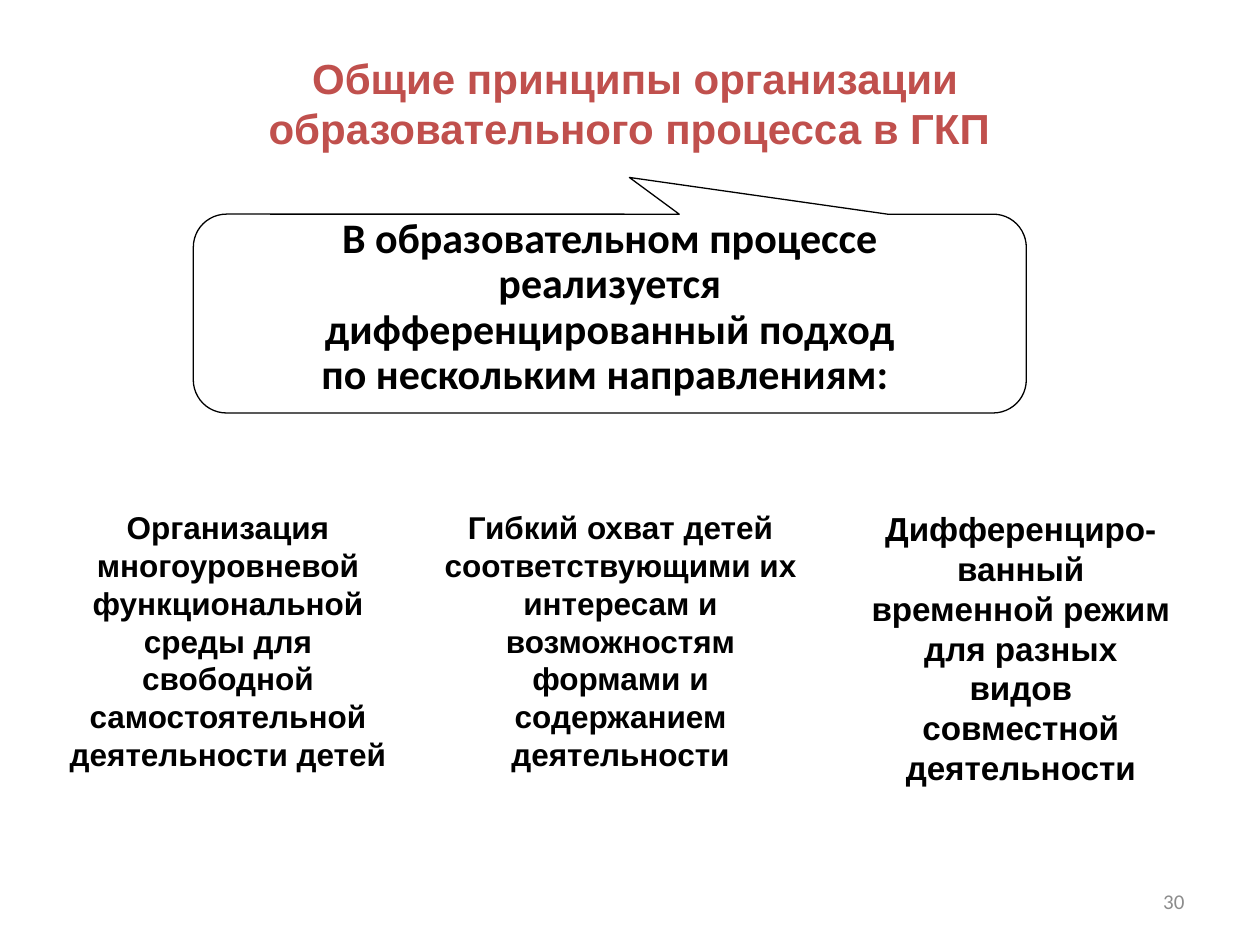
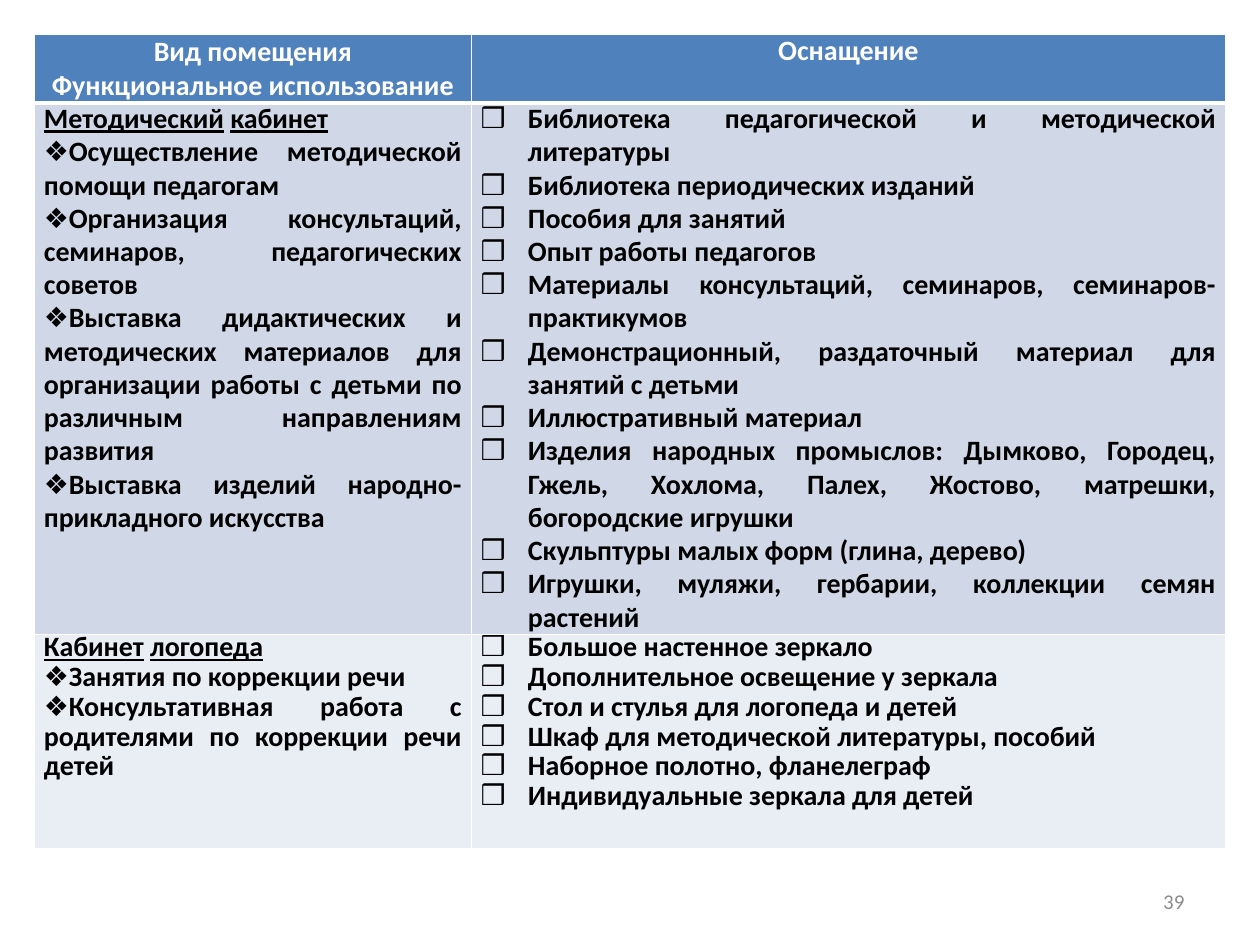
from lxml.etree import SubElement
from pptx import Presentation
from pptx.dml.color import RGBColor
from pptx.enum.shapes import MSO_SHAPE
from pptx.enum.text import MSO_ANCHOR, PP_ALIGN
from pptx.oxml.ns import qn
from pptx.util import Pt

BLACK = RGBColor(0, 0, 0)
WHITE = RGBColor(255, 255, 255)
RED = RGBColor(0xC0, 0x50, 0x4D)
GRAY = RGBColor(0x8C, 0x8C, 0x8C)
HEADER = RGBColor(0x4F, 0x81, 0xBD)
ROW_FILLS = [RGBColor(0xD0, 0xD8, 0xE8), RGBColor(0xE9, 0xED, 0xF4)]

TITLE = "Общие принципы организации образовательного процесса в ГКП "
CALLOUT = [
    "В образовательном процессе",
    "реализуется",
    "дифференцированный подход",
    "по нескольким направлениям: ",
]
CALLOUT_BOX = (110.5, 122.4, 476, 113.6)
CALLOUT_TIP = (359.7, 101.4)
DIRECTIONS = [  # left, width, font size, text
    (25.5, 209.5, 18, "Организация многоуровневой функциональной среды для "
                      "свободной самостоятельной деятельности детей"),
    (246.6, 216, 18, "Гибкий охват детей соответствующими их интересам и "
                     "возможностям формами и содержанием деятельности"),
    (490.4, 185.8, 19, "Дифференциро-ванный временной режим для разных видов "
                       "совместной деятельности"),
]
HEADINGS = [["Вид помещения", "Функциональное использование"], ["Оснащение"]]
ROOMS = [
    {
        "name": "Методический кабинет",
        "uses": [
            "Осуществление методической помощи педагогам",
            "Организация консультаций, семинаров, педагогических советов",
            "Выставка дидактических и методических материалов для организации "
            "работы с детьми по различным направлениям развития",
            "Выставка изделий народно-прикладного искусства",
        ],
        "equipment": [
            "Библиотека педагогической и методической литературы",
            "Библиотека периодических изданий",
            "Пособия для занятий",
            "Опыт работы педагогов",
            "Материалы консультаций, семинаров, семинаров-практикумов",
            "Демонстрационный, раздаточный материал для занятий с детьми",
            "Иллюстративный материал",
            "Изделия народных промыслов: Дымково, Городец, Гжель, Хохлома, "
            "Палех, Жостово, матрешки, богородские игрушки",
            "Скульптуры малых форм (глина, дерево)",
            "Игрушки, муляжи, гербарии, коллекции семян растений",
        ],
        "spacing": Pt(19),
    },
    {
        "name": "Кабинет логопеда",
        "uses": [
            "Занятия по коррекции речи",
            "Консультативная работа с родителями по коррекции речи детей",
        ],
        "equipment": [
            "Большое настенное зеркало",
            "Дополнительное освещение у зеркала",
            "Стол и стулья для логопеда и детей",
            "Шкаф для методической литературы, пособий",
            "Наборное полотно, фланелеграф",
            "Индивидуальные зеркала для детей",
        ],
        "spacing": Pt(17),
    },
]
COLUMN_WIDTHS = [249.6, 431]
ROW_HEIGHTS = [39.1, 303.8, 122.4]


def write(tf, lines, size=16, font="Calibri", color=BLACK, bold=True,
          align=PP_ALIGN.CENTER, spacing=None, bullet=None, hanging=0,
          underline_first=False):
    """Fill a text frame; underline_first makes the first line a heading without a bullet."""
    for i, line in enumerate(lines):
        p = tf.paragraphs[0] if i == 0 else tf.add_paragraph()
        heading = underline_first and i == 0
        if bullet and not heading:
            add_bullet(p, bullet, hanging)
        p.alignment = align
        if spacing:
            p.line_spacing = spacing
        parts = line.partition(" ") if heading else [line]
        for part in parts:
            r = p.add_run()
            r.text = part
            r.font.size = Pt(size)
            r.font.name = font
            r.font.bold = bold
            r.font.color.rgb = color
            if heading and part != " ":
                r.font.underline = True


def add_bullet(p, char, hanging):
    pPr = p._p.get_or_add_pPr()
    pPr.set("marL", str(Pt(hanging)))
    pPr.set("indent", str(-Pt(hanging)))
    SubElement(pPr, qn("a:buFont"), typeface="Calibri")
    SubElement(pPr, qn("a:buChar"), char=char)
    if hanging:
        tabs = SubElement(pPr, qn("a:tabLst"))
        SubElement(tabs, qn("a:tab"), pos=str(Pt(18)), algn="l")


def fill_white(sp):
    sp.shadow.inherit = False
    sp.fill.solid()
    sp.fill.fore_color.rgb = WHITE


def add_text(s, left, top, width, height, lines, anchor=MSO_ANCHOR.TOP,
             panel=False, **fmt):
    """Add a text box, or a white rectangle with text when panel is set."""
    box = Pt(left), Pt(top), Pt(width), Pt(height)
    if panel:
        sp = s.shapes.add_shape(MSO_SHAPE.RECTANGLE, *box)
        fill_white(sp)
        sp.line.fill.background()
    else:
        sp = s.shapes.add_textbox(*box)
    tf = sp.text_frame
    tf.word_wrap = True
    tf.margin_left = tf.margin_right = Pt(7)
    tf.vertical_anchor = anchor
    write(tf, lines, **fmt)


def add_slide(prs, number):
    s = prs.slides.add_slide(prs.slide_layouts[6])
    add_text(s, 515.8, 500.4, 168, 28.8, [str(number)], anchor=MSO_ANCHOR.MIDDLE,
             size=12, color=GRAY, bold=False, align=PP_ALIGN.RIGHT)
    return s


def style_cell(cell, fill, top, bottom):
    """Set fill, margins and white borders; top and bottom are border widths in points."""
    tcPr = cell._tc.get_or_add_tcPr()
    for side, width in (("L", 1), ("R", 1), ("T", top), ("B", bottom)):
        ln = SubElement(tcPr, qn(f"a:ln{side}"), w=str(Pt(width)))
        SubElement(SubElement(ln, qn("a:solidFill")), qn("a:srgbClr"), val=str(WHITE))
    cell.fill.solid()
    cell.fill.fore_color.rgb = fill
    cell.margin_left = cell.margin_right = Pt(5.4)
    cell.margin_top = cell.margin_bottom = 0


def add_callout(s):
    left, top, width, height = CALLOUT_BOX
    tip_x, tip_y = CALLOUT_TIP
    sp = s.shapes.add_shape(MSO_SHAPE.ROUNDED_RECTANGULAR_CALLOUT,
                            Pt(left), Pt(top), Pt(width), Pt(height))
    sp.adjustments[0] = (tip_x - left) / width - 0.5
    sp.adjustments[1] = (tip_y - top) / height - 0.5
    sp.adjustments[2] = 1 / 6
    fill_white(sp)
    sp.line.color.rgb = BLACK
    sp.line.width = Pt(0.75)
    tf = sp.text_frame
    tf.word_wrap = False
    tf.vertical_anchor = MSO_ANCHOR.MIDDLE
    tf.margin_bottom = Pt(10)
    write(tf, CALLOUT, size=24, spacing=0.9)


def build_principles(prs):
    s = add_slide(prs, 30)
    add_callout(s)
    for left, width, size, text in DIRECTIONS:
        add_text(s, left, 286.9, width, 8.4 * size + 7.2, [text], panel=True,
                 size=size, font="Arial", spacing=Pt(1.2 * size))
    add_text(s, 66, 26.2, 594, 65.5, [TITLE], size=24, font="Arial",
             color=RED, spacing=Pt(28.8))


def build_rooms(prs):
    s = add_slide(prs, 39)
    table = s.shapes.add_table(len(ROW_HEIGHTS), len(COLUMN_WIDTHS), Pt(19.7), Pt(19.7),
                               Pt(sum(COLUMN_WIDTHS)), Pt(sum(ROW_HEIGHTS))).table
    for column, width in zip(table.columns, COLUMN_WIDTHS):
        column.width = Pt(width)
    for row, height in zip(table.rows, ROW_HEIGHTS):
        row.height = Pt(height)

    for col, (lines, spacing) in enumerate(zip(HEADINGS, (None, Pt(19)))):
        cell = table.cell(0, col)
        style_cell(cell, HEADER, 1, 3)
        write(cell.text_frame, lines, color=WHITE, spacing=spacing)

    for row, (room, fill) in enumerate(zip(ROOMS, ROW_FILLS), 1):
        uses, equipment = table.cell(row, 0), table.cell(row, 1)
        for cell in (uses, equipment):
            style_cell(cell, fill, 3 if row == 1 else 1, 1)
        fmt = {"align": PP_ALIGN.JUSTIFY, "spacing": room["spacing"]}
        write(uses.text_frame, [room["name"], *room["uses"]], bullet="❖",
              underline_first=True, **fmt)
        write(equipment.text_frame, room["equipment"], bullet="❒", hanging=27, **fmt)


def main():
    prs = Presentation()
    prs.slide_width, prs.slide_height = Pt(720), Pt(540)
    build_principles(prs)
    build_rooms(prs)
    prs.save("out.pptx")


if __name__ == "__main__":
    main()
